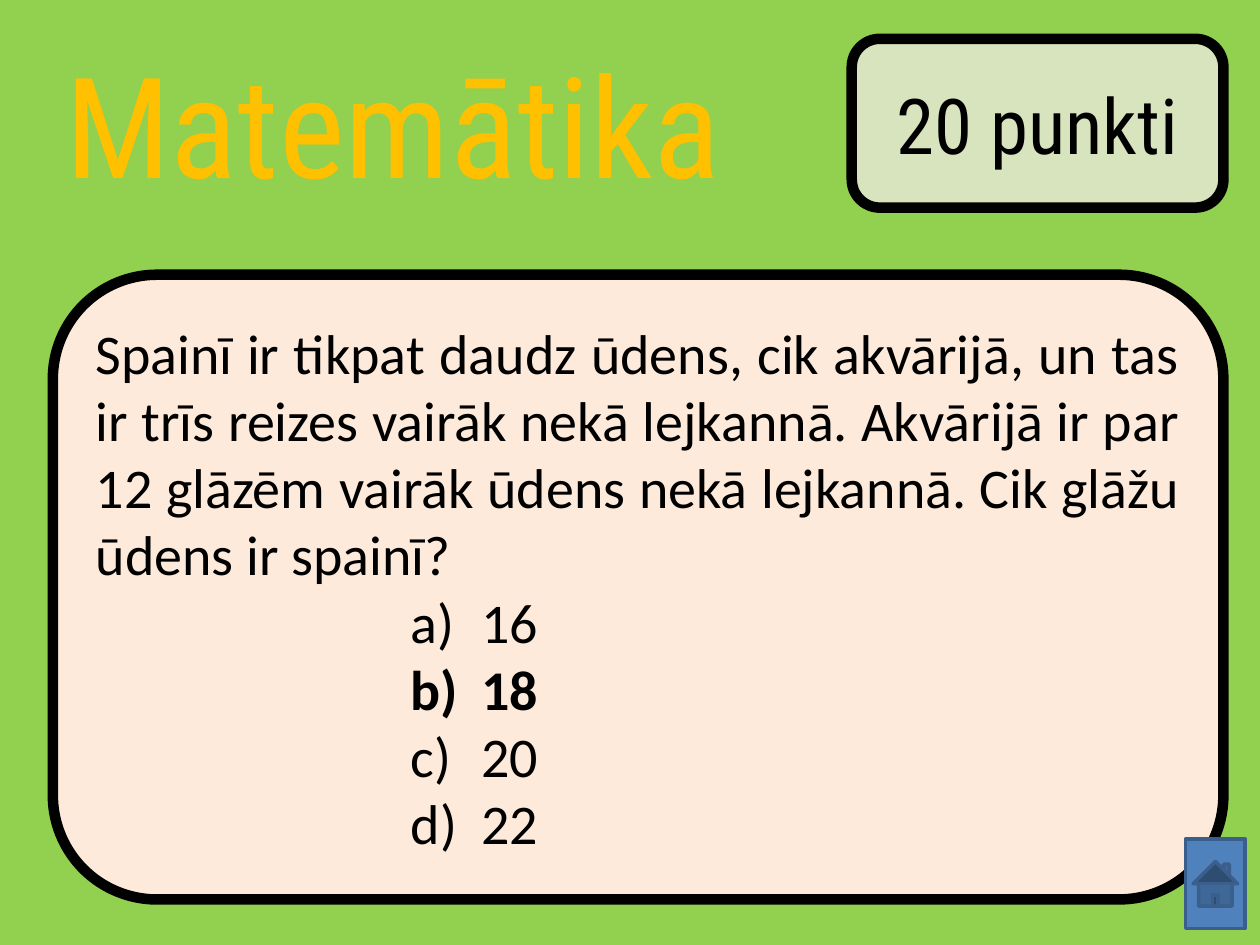
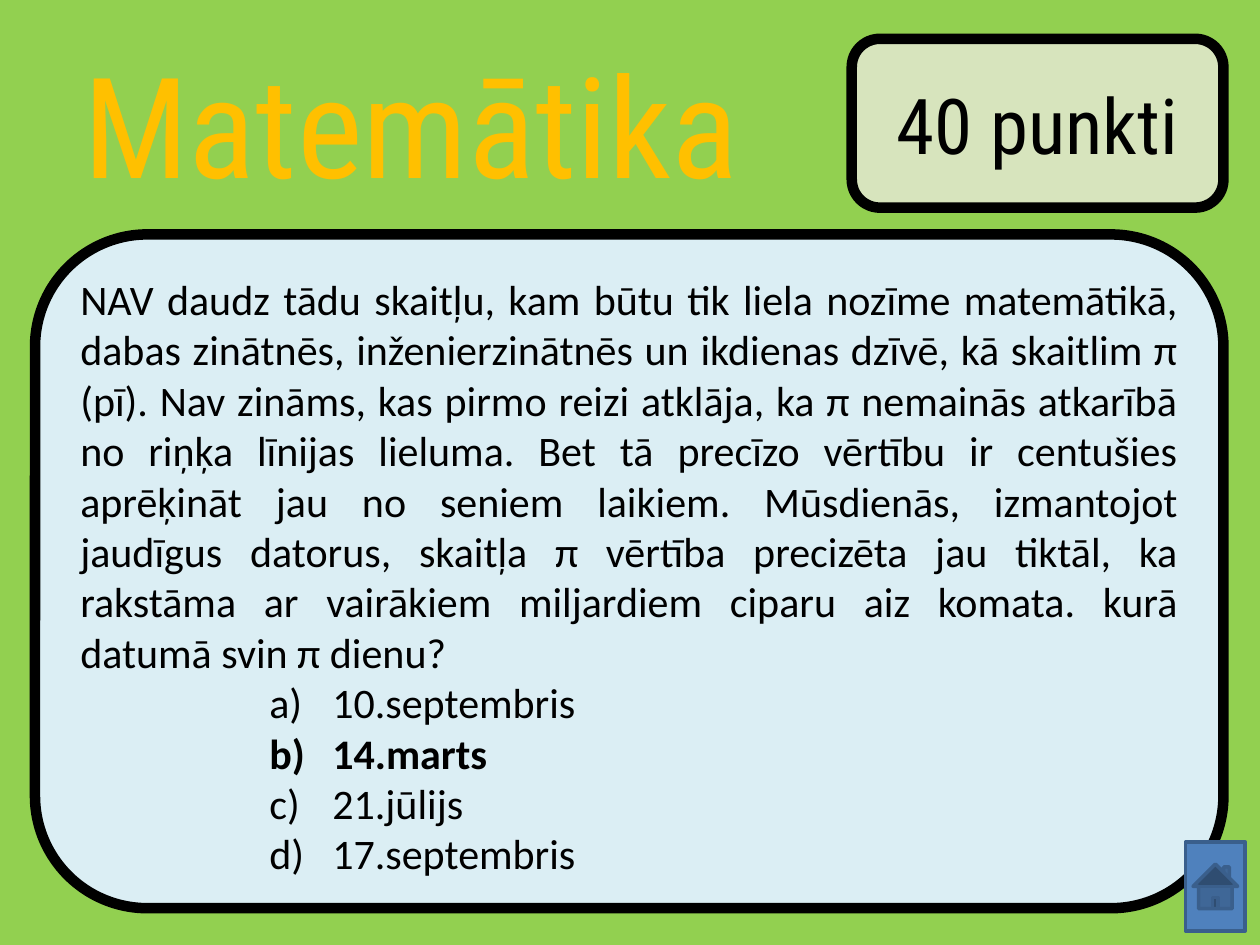
"""Build two quiz slides, each with a title, a points badge, a question card and a home button."""
from dataclasses import dataclass

import lxml.etree
import pptx
import pptx.dml.color
import pptx.enum.shapes
import pptx.enum.text
import pptx.oxml.ns
import pptx.presentation
import pptx.shapes.autoshape
import pptx.slide
import pptx.text.text
import pptx.util

Pt = pptx.util.Pt
Kind = pptx.enum.shapes.MSO_SHAPE
Align = pptx.enum.text.PP_ALIGN
Anchor = pptx.enum.text.MSO_ANCHOR

GREEN, GOLD, BLACK = "92D050", "FFC000", "000000"
BADGE, BLUE, NAVY = "D7E4BD", "4F81BD", "3A5F8C"
HEAD, BODY = "Roboto Condensed", "Calibri"
WIDE, HIGH = 720, 540
EDGE = 699.1


@dataclass(frozen=True)
class Box:
    """A rectangle in points."""
    left: float
    top: float
    width: float
    height: float

    def spans(self) -> list[pptx.util.Length]:
        """Return left, top, width and height as lengths."""
        return [Pt(n) for n in (self.left, self.top, self.width, self.height)]


@dataclass(frozen=True)
class Quiz:
    """One question with its answers and the look of its card."""
    points: int
    ask: str
    answers: tuple[str, ...]
    right: int
    fill: str
    size: int
    card: Box
    anchor: Anchor
    margin: float
    hang: float
    align: Align
    left: float
    home: float


QUIZZES = (
    Quiz(20,
         "Spainī ir tikpat daudz ūdens, cik akvārijā, un tas ir trīs reizes vairāk "
         "nekā lejkannā. Akvārijā ir par 12 glāzēm vairāk ūdens nekā lejkannā. "
         "Cik glāžu ūdens ir spainī?",
         ("16", "18", "20", "22"), 1, "FDEADA", 32,
         Box(30.2, 157, EDGE - 30.2, 357), Anchor.MIDDLE, 220.5, 40.5,
         Align.LEFT, 30.2, 479.5),
    Quiz(40,
         "NAV daudz tādu skaitļu, kam būtu tik liela nozīme matemātikā, dabas "
         "zinātnēs, inženierzinātnēs un ikdienas dzīvē, kā skaitlim π (pī). Nav "
         "zināms, kas pirmo reizi atklāja, ka π nemainās atkarībā no riņķa līnijas "
         "lieluma. Bet tā precīzo vērtību ir centušies aprēķināt jau no seniem "
         "laikiem. Mūsdienās, izmantojot jaudīgus datorus, skaitļa π vērtība "
         "precizēta jau tiktāl, ka rakstāma ar vairākiem miljardiem ciparu aiz "
         "komata. kurā datumā svin π dienu?",
         ("10.septembris", "14.marts", "21.jūlijs", "17.septembris"), 1, "DBEEF4", 24,
         Box(20, 134, EDGE - 20, 385), Anchor.TOP, 144, 36,
         Align.CENTER, 31, 481),
)


def color(code: str) -> pptx.dml.color.RGBColor:
    """Turn a hex string into a colour."""
    return pptx.dml.color.RGBColor.from_string(code)


def shape(slide: pptx.slide.Slide, kind: Kind, box: Box, fill: str,
          line: str = "", width: float = 0) -> pptx.shapes.autoshape.Shape:
    """Draw a flat preset shape, outlined when a line colour is given."""
    item = slide.shapes.add_shape(kind, *box.spans())
    item.shadow.inherit = False
    item.fill.solid()
    item.fill.fore_color.rgb = color(fill)
    if line:
        item.line.color.rgb = color(line)
        item.line.width = Pt(width)
    else:
        item.line.fill.background()
    return item


def write(frame: pptx.text.text.TextFrame, text: str, *, font: str, size: float,
          ink: str = BLACK, align: Align = Align.CENTER, bold: bool = False,
          margin: float = 0, hang: float = 0) -> None:
    """Write a paragraph, lettered as a list item when it has a hanging indent."""
    para = frame.add_paragraph() if frame.text else frame.paragraphs[0]
    para.alignment = align
    run = para.add_run()
    run.text = text
    run.font.name = font
    run.font.size = Pt(size)
    run.font.bold = bold
    run.font.color.rgb = color(ink)
    if hang:
        props = para._p.get_or_add_pPr()
        props.set("marL", str(Pt(margin)))
        props.set("indent", str(-Pt(hang)))
        mark = lxml.etree.SubElement(props, pptx.oxml.ns.qn("a:buAutoNum"))
        mark.set("type", "alphaLcParenR")


def title(slide: pptx.slide.Slide, quiz: Quiz) -> None:
    """Write the subject at the top left."""
    frame = slide.shapes.add_textbox(*Box(quiz.left, 18.7, 408.2, 104.4).spans()).text_frame
    frame.word_wrap = False
    frame.auto_size = pptx.enum.text.MSO_AUTO_SIZE.SHAPE_TO_FIT_TEXT
    write(frame, "Matemātika", font=HEAD, size=80, ink=GOLD, align=quiz.align)


def badge(slide: pptx.slide.Slide, quiz: Quiz) -> None:
    """Draw the points badge at the top right."""
    box = Box(486.7, 22.2, EDGE - 486.7, 96.5)
    frame = shape(slide, Kind.ROUNDED_RECTANGLE, box, BADGE, BLACK, 6).text_frame
    frame.vertical_anchor = Anchor.MIDDLE
    write(frame, f"{quiz.points} punkti", font=HEAD, size=44)


def card(slide: pptx.slide.Slide, quiz: Quiz) -> None:
    """Draw the question card with its lettered answers."""
    frame = shape(slide, Kind.ROUNDED_RECTANGLE, quiz.card, quiz.fill, BLACK, 6).text_frame
    frame.vertical_anchor = quiz.anchor
    write(frame, quiz.ask, font=BODY, size=quiz.size, align=Align.JUSTIFY)
    for spot, answer in enumerate(quiz.answers):
        write(frame, answer, font=BODY, size=quiz.size, align=Align.JUSTIFY,
              bold=spot == quiz.right, margin=quiz.margin, hang=quiz.hang)


def build(deck: pptx.presentation.Presentation, quiz: Quiz) -> None:
    """Add one quiz slide."""
    slide = deck.slides.add_slide(deck.slide_layouts[6])
    shape(slide, Kind.RECTANGLE, Box(0, 0, WIDE, HIGH), GREEN)
    title(slide, quiz)
    badge(slide, quiz)
    card(slide, quiz)
    shape(slide, Kind.ACTION_BUTTON_HOME, Box(677.5, quiz.home, 34, 51), BLUE, NAVY, 2)


def main() -> None:
    """Build the deck and save it."""
    deck = pptx.Presentation()
    deck.slide_width, deck.slide_height = Pt(WIDE), Pt(HIGH)
    for quiz in QUIZZES:
        build(deck, quiz)
    deck.save("out.pptx")


if __name__ == "__main__":
    main()
